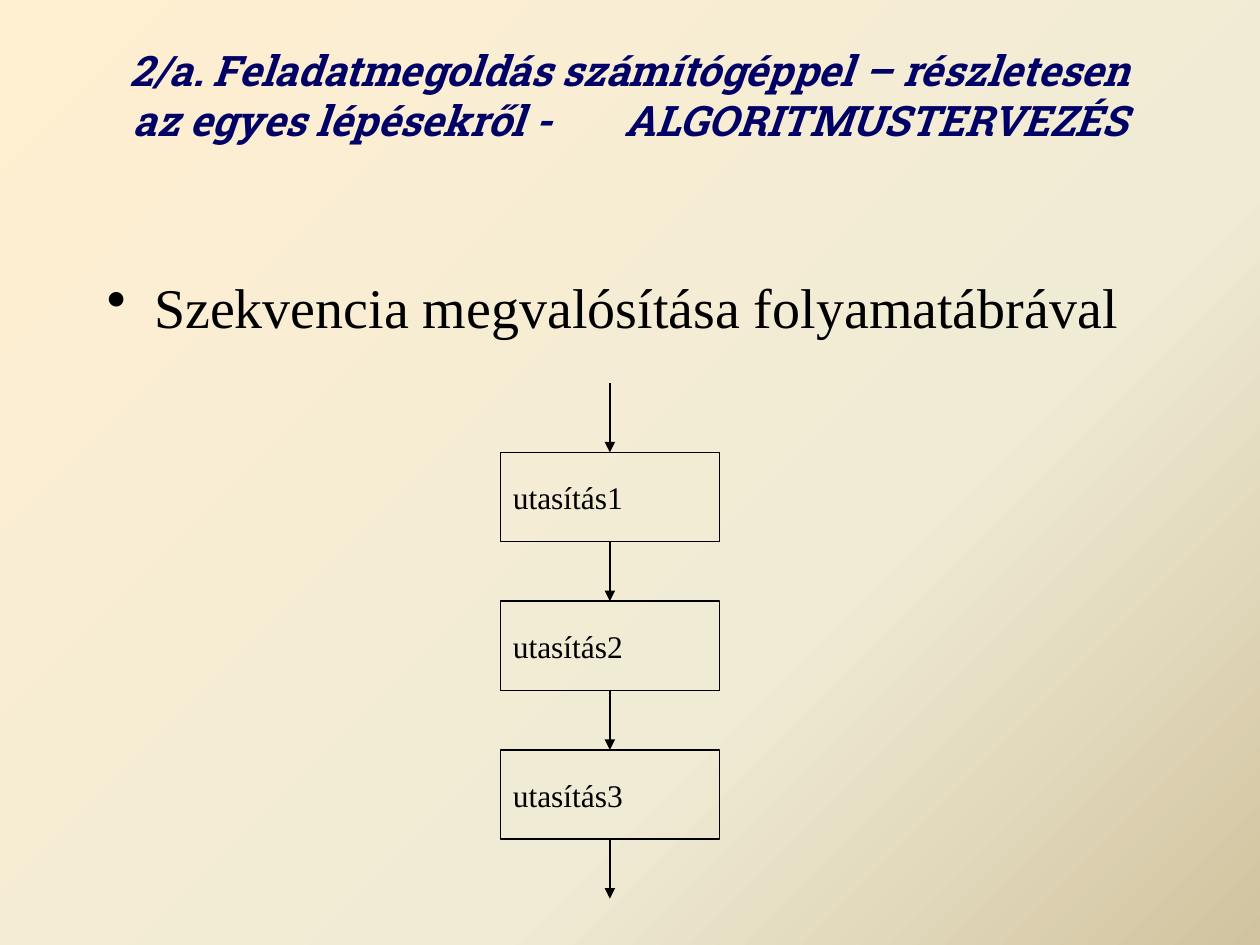
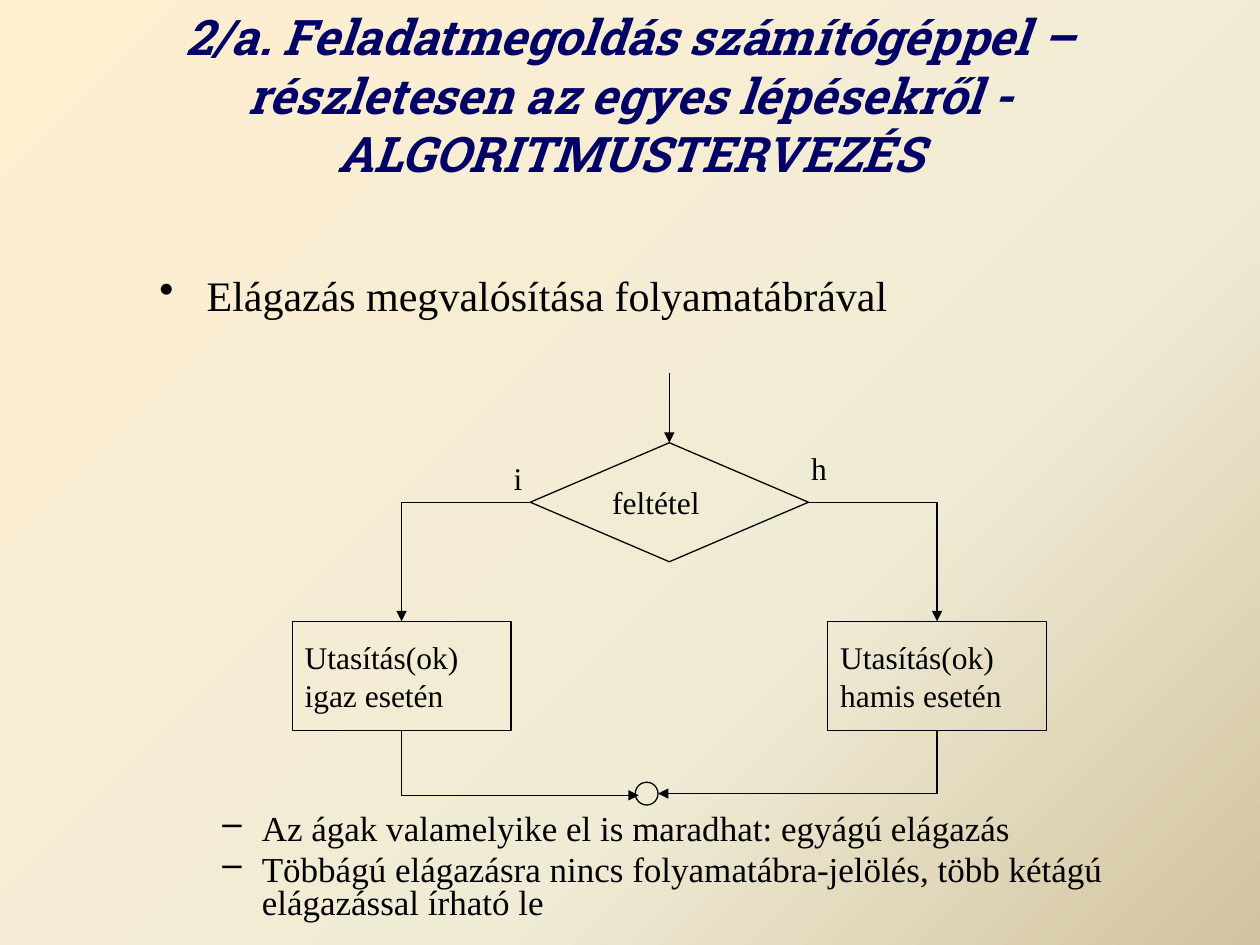
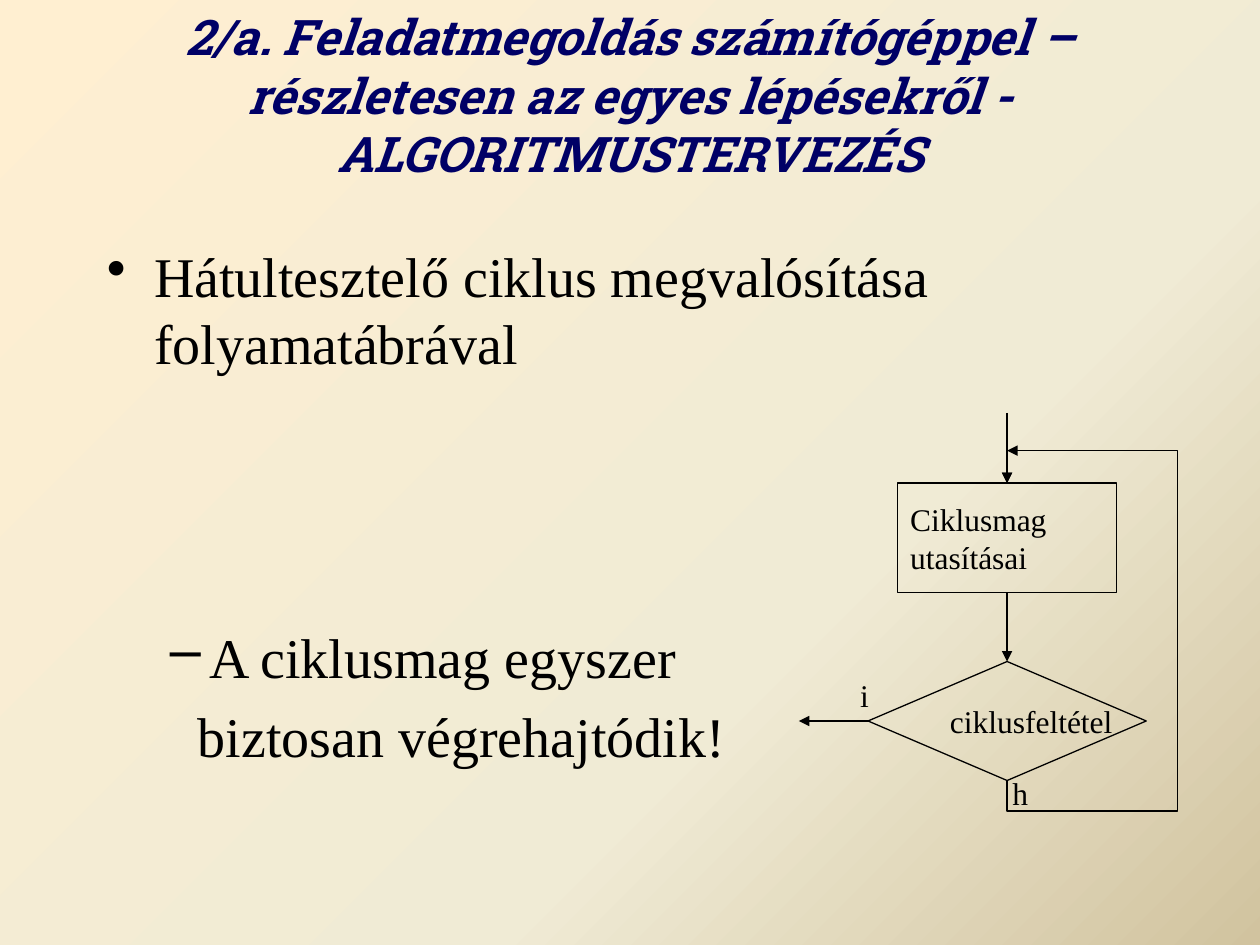
from copy import deepcopy

from lxml import etree
from pptx import Presentation
from pptx.dml.color import RGBColor
from pptx.enum import shapes, text
from pptx.oxml.ns import qn
from pptx.util import Pt

BLACK = RGBColor(0x00, 0x00, 0x00)
NAVY = RGBColor(0x00, 0x00, 0x66)
STOPS = (
    (0, RGBColor(0xFF, 0xEF, 0xD1)),
    (0.65, RGBColor(0xF0, 0xEB, 0xD5)),
    (1, RGBColor(0xD1, 0xC3, 0x9F)),
)
SERIF = "Times New Roman"
SLAB = "Roboto Slab"
HEAD = ("2/a. Feladatmegoldás számítógéppel – részletesen az egyes lépésekről -",
        " ", "ALGORITMUSTERVEZÉS")
KIND = shapes.MSO_SHAPE
WIRE = shapes.MSO_CONNECTOR
BOX_W = 125
RHOMB_W, RHOMB_H = 159, 68


def format_run(run, size, **more):
    values = {"name": SERIF, "size": Pt(size), **more}
    color = values.pop("color", BLACK)
    for key, value in values.items():
        setattr(run.font, key, value)
    run.font.color.rgb = color


def indent(para, left, first, mark=None):
    """Set the left margin, first-line offset and bullet of a paragraph."""
    props = para._p.get_or_add_pPr()
    props.set("marL", str(Pt(left)))
    props.set("indent", str(Pt(first)))
    if mark:
        etree.SubElement(props, qn("a:buChar")).set("char", mark)
    else:
        etree.SubElement(props, qn("a:buNone"))


def add_lines(frame, lines):
    """Write short lines at the hanging indent that all labels share."""
    frame.word_wrap = False
    for num, line in enumerate(lines):
        para = frame.add_paragraph() if num else frame.paragraphs[0]
        para.alignment = text.PP_ALIGN.LEFT
        indent(para, 27, -27)
        run = para.add_run()
        run.text = line
        format_run(run, 18)


def add_title(slide, size):
    box = slide.shapes.add_textbox(Pt(54), Pt(24), Pt(612), Pt(60))
    frame = box.text_frame
    frame.word_wrap = True
    frame.vertical_anchor = text.MSO_ANCHOR.MIDDLE
    para = frame.paragraphs[0]
    para.alignment = text.PP_ALIGN.CENTER
    for part in HEAD:
        run = para.add_run()
        run.text = part
        format_run(run, size, name=SLAB, bold=True, italic=True, color=NAVY)
        if part == " ":
            run.font._element.set("spc", str(150 * size))


def add_body(slide, place, items, pitch=None):
    """Add a list; an item is wording, size, margin, offset, bullet, gap above."""
    box = slide.shapes.add_textbox(*map(Pt, place))
    frame = box.text_frame
    frame.word_wrap = True
    for num, (words, size, left, first, mark, gap) in enumerate(items):
        para = frame.add_paragraph() if num else frame.paragraphs[0]
        para.space_before = Pt(gap or 0.2 * size)
        para.line_spacing = pitch
        indent(para, left, first, mark)
        run = para.add_run()
        run.text = words
        format_run(run, size)


def add_label(slide, left, top, width, words):
    box = slide.shapes.add_textbox(Pt(left), Pt(top), Pt(width), Pt(29))
    add_lines(box.text_frame, [words])


def outline(shape):
    shape.shadow.inherit = False
    shape.fill.background()
    shape.line.color.rgb = BLACK
    shape.line.width = Pt(0.75)


def add_node(slide, kind, place, *lines):
    node = slide.shapes.add_shape(kind, *map(Pt, place))
    outline(node)
    node.text_frame.vertical_anchor = text.MSO_ANCHOR.MIDDLE
    add_lines(node.text_frame, lines)


def add_step(slide, left, top, height, *lines):
    add_node(slide, KIND.FLOWCHART_PROCESS, (left, top, BOX_W, height), *lines)


def add_test(slide, left, top, words):
    place = (left, top, RHOMB_W, RHOMB_H)
    add_node(slide, KIND.FLOWCHART_DECISION, place, words)


def add_head(line):
    etree.SubElement(line._get_or_add_ln(), qn("a:tailEnd")).set("type", "triangle")


def add_arrow(slide, start, end, kind=WIRE.STRAIGHT):
    wire = slide.shapes.add_connector(kind, *map(Pt, (*start, *end)))
    wire.line.color.rgb = BLACK
    wire.line.width = Pt(0.75)
    add_head(wire.line)
    etree.SubElement(wire._element.spPr, qn("a:effectLst"))
    return wire


def add_drop(slide, mid, top, end):
    add_arrow(slide, (mid, top), (mid, end))


def turn_down(slide, start, end):
    """Draw an arrow that runs sideways and then down."""
    wire = add_arrow(slide, start, end, WIRE.ELBOW)
    wire._element.spPr.find(qn("a:prstGeom")).set("prst", "bentConnector2")


def turn_side(slide, start, end):
    """Draw an arrow that runs down and then sideways."""
    wire = add_arrow(slide, start, end, WIRE.ELBOW)
    geom = wire._element.spPr.find(qn("a:prstGeom"))
    guides = geom.find(qn("a:avLst"))
    if guides is None:
        guides = etree.SubElement(geom, qn("a:avLst"))
    guide = etree.SubElement(guides, qn("a:gd"))
    guide.set("name", "adj1")
    guide.set("fmla", "val 0")


def add_loop(slide, points):
    pen = slide.shapes.build_freeform(*map(Pt, points[0]))
    pen.add_line_segments([(Pt(x), Pt(y)) for x, y in points[1:]], close=False)
    loop = pen.convert_to_shape()
    outline(loop)
    add_head(loop.line)


def paint_master(master):
    fill = master.background.fill
    fill.gradient()
    fill.gradient_angle = 315
    stops = master.element.find(".//" + qn("a:gsLst"))
    stops.append(deepcopy(stops[-1]))
    for stop, (place, color) in zip(fill.gradient_stops, STOPS):
        stop.position = place
        stop.color.rgb = color


def draw_sequence(slide):
    add_title(slide, 24)
    add_body(slide, (54, 152, 612, 346), [
        ("Szekvencia megvalósítása folyamatábrával", 32, 27, -27, "•", None)])
    left, top, height, step = 286, 258.5, 51, 85
    mid = left + BOX_W / 2
    add_drop(slide, mid, 219, top)
    for num in range(3):
        y = top + num * step
        add_step(slide, left, y, height, f"utasítás{num + 1}")
        add_drop(slide, mid, y + height, y + step)


def draw_branch(slide):
    add_title(slide, 28)
    add_body(slide, (84, 156, 594, 376), [
        ("Elágazás megvalósítása folyamatábrával", 24, 27, -27, "•", None),
        ("Az ágak valamelyike el is maradhat: egyágú elágazás",
         20, 58.5, -22.5, "–", 283),
        ("Többágú elágazásra nincs folyamatábra-jelölés, több kétágú "
         "elágazással írható le", 20, 58.5, -22.5, "–", None),
    ], 0.8)
    left, top = 303, 253
    level = top + RHOMB_H / 2
    add_drop(slide, left + RHOMB_W / 2, 213, top)
    add_test(slide, left, top, "feltétel")
    add_label(slide, 286.5, 258.5, 19, "i")
    add_label(slide, 456.5, 253, 24.5, "h")
    low, height = 355, 62.5
    ring, size = 363, 13
    add_node(slide, KIND.OVAL, (ring, 447, size, size))
    sides = ((167, left, ring + 2, 454.5, "igaz esetén"),
             (473, left + RHOMB_W, ring + size, 453.5, "hamis esetén"))
    for x, tip, end, base, case in sides:
        mid = x + BOX_W / 2
        add_step(slide, x, low, height, "Utasítás(ok)", case)
        turn_down(slide, (tip, level), (mid, low))
        turn_side(slide, (mid, low + height), (end, base))


def draw_loop(slide):
    add_title(slide, 28)
    add_body(slide, (54, 134.5, 612, 363), [
        ("Hátultesztelő ciklus megvalósítása folyamatábrával",
         32, 27, -27, "•", None),
        ("A ciklusmag egyszer", 32, 58.5, -22.5, "–", 141),
        ("biztosan végrehajtódik!", 32, 52, 0, None, None),
    ])
    left, top = 496, 378
    mid, level = left + RHOMB_W / 2, top + RHOMB_H / 2
    core, height = 276, 62.5
    add_drop(slide, mid, 236, core)
    add_step(slide, mid - BOX_W / 2, core, height, "Ciklusmag", "utasításai")
    add_drop(slide, mid, core + height, top)
    add_test(slide, left, top, "ciklusfeltétel")
    add_label(slide, 484.5, 383, 19, "i")
    add_label(slide, 571.5, 439, 24.5, "h")
    add_arrow(slide, (left, level), (456.5, level))
    side, base, back = 673, 463.5, 257.5
    add_loop(slide, [(mid, top + RHOMB_H), (mid, base), (side, base),
                     (side, back), (mid, back), (mid, core)])
    add_arrow(slide, (609, back), (mid, back))


def main():
    deck = Presentation()
    deck.slide_width, deck.slide_height = Pt(720), Pt(540)
    paint_master(deck.slide_master)
    for draw in (draw_sequence, draw_branch, draw_loop):
        draw(deck.slides.add_slide(deck.slide_layouts[6]))
    deck.save("out.pptx")


if __name__ == "__main__":
    main()
